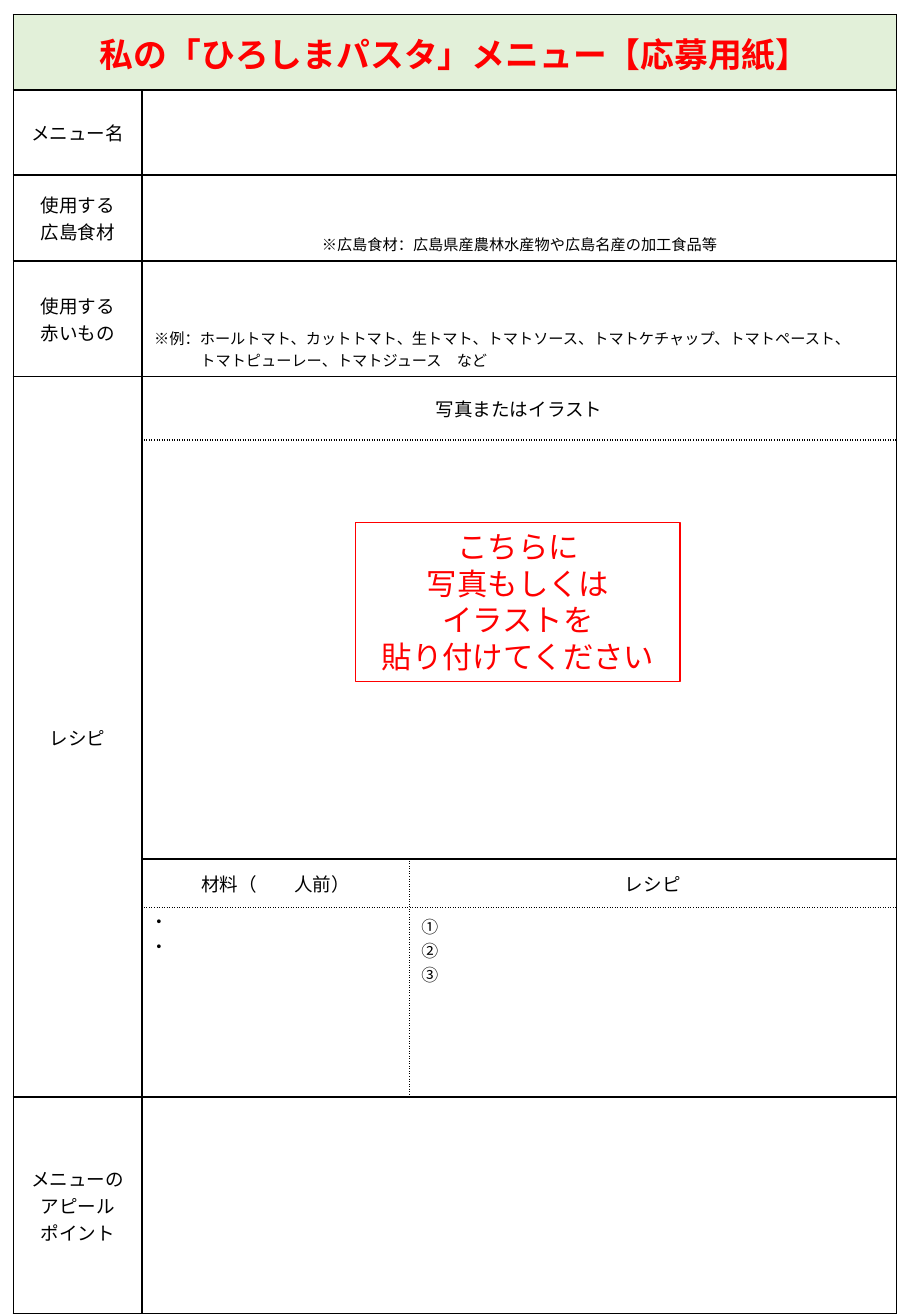
from dataclasses import dataclass
from itertools import product

from lxml.etree import SubElement
from pptx import Presentation
from pptx.dml.color import RGBColor
from pptx.enum.shapes import MSO_SHAPE as Preset
from pptx.enum.text import MSO_ANCHOR as Anchor, PP_ALIGN as Align
from pptx.oxml.ns import qn
from pptx.shapes.autoshape import Shape
from pptx.slide import Slide
from pptx.table import Table, _Cell as Cell
from pptx.text.text import TextFrame
from pptx.util import Inches, Pt

FONT = "Noto Sans CJK JP"
BLACK, RED, WHITE, PALE_GREEN = "000000", "FF0000", "FFFFFF", "E2F0D9"
COLUMN_WIDTHS = (1.06, 2.2, 4.01)
ROW_HEIGHTS = (0.62, 0.7, 0.71, 0.95, 0.52, 3.45, 0.4, 1.56, 1.78)
PHOTO_HEADING, PHOTO, LIST_HEADING, LISTS = 4, 5, 6, 7


@dataclass(frozen=True)
class Entry:
    row: int
    column: int
    lines: tuple[str, ...]
    last_column: int = 0
    last_row: int = 0
    size: float = 11
    color: str = BLACK
    bold: bool = False
    align: Align = Align.CENTER
    anchor: Anchor = Anchor.MIDDLE
    fill: str = WHITE
    side_margin: float = 0.1
    top_margin: float = 0.05
    last_indent: float = 0


ENTRIES = (
    Entry(0, 0, ("私の「ひろしまパスタ」メニュー【応募用紙】",), last_column=2,
          size=20, color=RED, bold=True, fill=PALE_GREEN),
    Entry(1, 0, ("メニュー名",)),
    Entry(1, 1, (), last_column=2),
    Entry(2, 0, ("使用する", "広島食材")),
    Entry(2, 1, ("※広島食材：広島県産農林水産物や広島名産の加工食品等",), last_column=2,
          size=9, anchor=Anchor.BOTTOM),
    Entry(3, 0, ("使用する", "赤いもの")),
    Entry(3, 1, ("※例：ホールトマト、カットトマト、生トマト、トマトソース、トマトケチャップ、トマトペースト、",
                 "トマトピューレー、トマトジュース　など"), last_column=2,
          size=9, align=Align.LEFT, anchor=Anchor.BOTTOM, last_indent=0.38),
    Entry(PHOTO_HEADING, 0, ("レシピ",), last_row=LISTS),
    Entry(PHOTO_HEADING, 1, ("写真またはイラスト",), last_column=2),
    Entry(PHOTO, 1, (), last_column=2),
    Entry(LIST_HEADING, 1, ("材料（　　人前）",)),
    Entry(LIST_HEADING, 2, ("レシピ",)),
    Entry(LISTS, 1, ("・", "・"), size=10.5, align=Align.JUSTIFY, anchor=Anchor.TOP,
          side_margin=0.07, top_margin=0),
    Entry(LISTS, 2, ("①", "②", "③"), size=10, align=Align.LEFT, anchor=Anchor.TOP),
    Entry(8, 0, ("メニューの", "アピール", "ポイント")),
    Entry(8, 1, (), last_column=2),
)


def rgb(color: str) -> RGBColor:
    return RGBColor.from_string(color)


def write_lines(frame: TextFrame, lines: tuple[str, ...], size: float, color: str,
                bold: bool, align: Align) -> None:
    for index, line in enumerate(lines):
        paragraph = frame.add_paragraph() if index else frame.paragraphs[0]
        paragraph.alignment = align
        run = paragraph.add_run()
        run.text = line
        for name, value in {"size": Pt(size), "bold": bold, "name": FONT}.items():
            setattr(run.font, name, value)
        run.font.color.rgb = rgb(color)
        SubElement(run.font._element, qn("a:ea"), typeface=FONT)


def dotted_sides(row: int, column: int) -> str:
    sides = ""
    if column > 0:
        if row in (PHOTO_HEADING, LIST_HEADING):
            sides += "B"
        if row in (PHOTO, LISTS):
            sides += "T"
        if row in (LIST_HEADING, LISTS):
            sides += "R" if column == 1 else "L"
    return sides


def add_borders(cell: Cell, dotted: str) -> None:
    properties = cell._tc.get_or_add_tcPr()
    for side in "LRTB":
        line = SubElement(properties, qn(f"a:ln{side}"), w=str(Pt(1)))
        fill = SubElement(line, qn("a:solidFill"))
        SubElement(fill, qn("a:srgbClr"), val=BLACK)
        SubElement(line, qn("a:prstDash"), val="dot" if side in dotted else "solid")


def fill_entry(table: Table, entry: Entry) -> None:
    cell = table.cell(entry.row, entry.column)
    last_row = max(entry.row, entry.last_row)
    last_column = max(entry.column, entry.last_column)
    if (last_row, last_column) != (entry.row, entry.column):
        cell.merge(table.cell(last_row, last_column))
    cell_format = {
        "vertical_anchor": entry.anchor,
        "margin_left": Inches(entry.side_margin),
        "margin_right": Inches(entry.side_margin),
        "margin_top": Inches(entry.top_margin),
        "margin_bottom": Inches(entry.top_margin),
    }
    for name, value in cell_format.items():
        setattr(cell, name, value)
    cell.fill.solid()
    cell.fill.fore_color.rgb = rgb(entry.fill)
    write_lines(cell.text_frame, entry.lines, entry.size, entry.color, entry.bold, entry.align)
    if entry.last_indent:
        last_paragraph = cell.text_frame.paragraphs[-1]
        last_paragraph._p.get_or_add_pPr().set("marL", str(Inches(entry.last_indent)))


def add_form(slide: Slide) -> Table:
    table = slide.shapes.add_table(
        len(ROW_HEIGHTS), len(COLUMN_WIDTHS), Inches(0.11), Inches(0.12),
        Inches(sum(COLUMN_WIDTHS)), Inches(sum(ROW_HEIGHTS))).table
    table.first_row = False
    table.horz_banding = False
    for column, width in zip(table.columns, COLUMN_WIDTHS):
        column.width = Inches(width)
    for row, height in zip(table.rows, ROW_HEIGHTS):
        row.height = Inches(height)
    for row, column in product(range(len(ROW_HEIGHTS)), range(len(COLUMN_WIDTHS))):
        cell = table.cell(row, column)
        add_borders(cell, dotted_sides(row, column))
        cell.fill.solid()
        cell.fill.fore_color.rgb = rgb(WHITE)
    for entry in ENTRIES:
        fill_entry(table, entry)
    return table


def add_photo_note(slide: Slide) -> Shape:
    note = slide.shapes.add_shape(
        Preset.RECTANGLE, Inches(2.93), Inches(4.3), Inches(2.67), Inches(1.31))
    note.shadow.inherit = False
    note.fill.background()
    note.line.color.rgb = rgb(RED)
    note.line.width = Pt(0.75)
    frame = note.text_frame
    for name, value in {"word_wrap": True, "vertical_anchor": Anchor.TOP}.items():
        setattr(frame, name, value)
    lines = ("こちらに", "写真もしくは", "イラストを", "貼り付けてください")
    write_lines(frame, lines, 18, RED, False, Align.CENTER)
    for paragraph in frame.paragraphs:
        paragraph.line_spacing = Pt(21.6)
    return note


def main() -> None:
    presentation = Presentation()
    presentation.slide_width = Inches(7.5)
    presentation.slide_height = Inches(10.83)
    slide = presentation.slides.add_slide(presentation.slide_layouts[6])
    add_form(slide)
    add_photo_note(slide)
    presentation.save("out.pptx")


if __name__ == "__main__":
    main()
